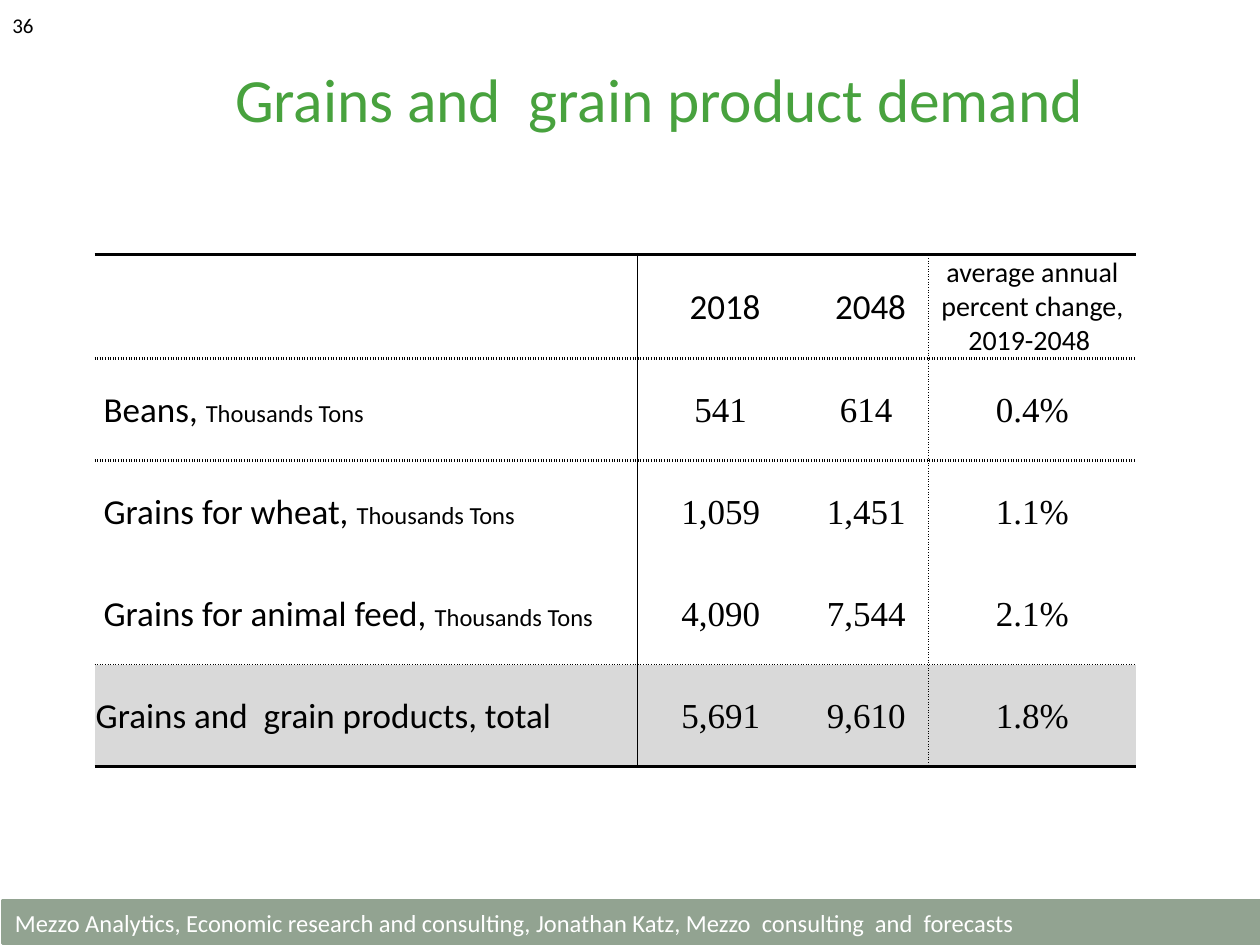
from typing import NamedTuple, Optional

from lxml import etree
from pptx import Presentation
from pptx.dml.color import RGBColor
from pptx.enum.shapes import MSO_SHAPE
from pptx.enum.text import MSO_ANCHOR, MSO_AUTO_SIZE, PP_ALIGN
from pptx.oxml.ns import qn
from pptx.util import Inches, Pt

RECT = MSO_SHAPE.RECTANGLE
MIDDLE = MSO_ANCHOR.MIDDLE
FIXED = MSO_AUTO_SIZE.NONE
LEFT, CENTER = PP_ALIGN.LEFT, PP_ALIGN.CENTER

BLACK = RGBColor(0, 0, 0)
WHITE = RGBColor(0xFF, 0xFF, 0xFF)
GREEN = RGBColor(0x48, 0xA2, 0x3E)
SAGE = RGBColor(0x92, 0xA3, 0x91)
GRAY = RGBColor(0xD9, 0xD9, 0xD9)

SANS, SERIF = "Calibri", "Times New Roman"


class Rule(NamedTuple):
    width: float
    dash: str


class Row(NamedTuple):
    label: str
    unit: str
    start: str
    end: str
    growth: str


THICK, THIN = Rule(2.25, "solid"), Rule(1, "solid")
DOTS, FINE = Rule(2.25, "sysDot"), Rule(1, "sysDot")
ACROSS = [THICK, DOTS, DOTS, None, FINE, THICK]
DOWN = [None, THIN, None, FINE, None]

HEADS = ["", "2018", "2048", "average annual percent change,\n2019-2048 "]
UNIT = "Thousands Tons"
ROWS = [
    Row(" Beans, ", UNIT, "541 ", "614 ", "0.4%"),
    Row(" Grains for wheat, ", UNIT, "1,059 ", "1,451 ", "1.1%"),
    Row(" Grains for animal feed, ", UNIT, "4,090 ", "7,544 ", "2.1%"),
    Row("Grains and  grain products, total", "", "5,691 ", "9,610 ", "1.8%"),
]
WIDTHS = [4.31, 1.39, 0.92, 1.65]
HEIGHT = 0.81


def style(run, size: float, color: RGBColor, font: str = SANS) -> None:
    run.font.size = Pt(size)
    run.font.name = font
    run.font.color.rgb = color


def write(shape, text: str, size: float, color: RGBColor, align) -> None:
    frame = shape.text_frame
    frame.text = text
    frame.word_wrap = True
    frame.auto_size = FIXED
    frame.vertical_anchor = MIDDLE
    para = frame.paragraphs[0]
    para.alignment = align
    style(para.runs[0], size, color)


def edge(cell, side: str, rule: Optional[Rule]) -> None:
    line = etree.SubElement(cell._tc.get_or_add_tcPr(), qn(f"a:ln{side}"))
    if rule is None:
        etree.SubElement(line, qn("a:noFill"))
        return
    line.set("w", str(Pt(rule.width)))
    fill = etree.SubElement(line, qn("a:solidFill"))
    etree.SubElement(fill, qn("a:srgbClr")).set("val", str(BLACK))
    etree.SubElement(line, qn("a:prstDash")).set("val", rule.dash)


def frame_cell(cell, row: int, col: int) -> None:
    cell.vertical_anchor = MIDDLE
    cell.margin_left = cell.margin_right = cell.margin_top = Inches(0.01)
    cell.margin_bottom = 0
    edge(cell, "L", DOWN[col])
    edge(cell, "R", DOWN[col + 1])
    edge(cell, "T", ACROSS[row])
    edge(cell, "B", ACROSS[row + 1])
    if row == len(ROWS):
        cell.fill.solid()
        cell.fill.fore_color.rgb = GRAY
    else:
        cell.fill.background()


def fill_cell(cell, text: str, size: float, font: str, align) -> None:
    cell.text_frame.text = text
    for para in cell.text_frame.paragraphs:
        para.alignment = align
        for run in para.runs:
            style(run, size, BLACK, font)


def add_grid(slide) -> None:
    count = len(ROWS) + 1
    grid = slide.shapes.add_table(
        count, len(WIDTHS), Inches(0.75), Inches(2.02),
        Inches(sum(WIDTHS)), Inches(HEIGHT * count)).table
    grid.first_row = grid.horz_banding = False
    for col, width in enumerate(WIDTHS):
        grid.columns[col].width = Inches(width)
    for row in range(count):
        grid.rows[row].height = Inches(HEIGHT)
        for col in range(len(WIDTHS)):
            frame_cell(grid.cell(row, col), row, col)
    for col, head in enumerate(HEADS):
        fill_cell(grid.cell(0, col), head, 16 if col == 3 else 20, SANS, CENTER)
    for row, item in enumerate(ROWS, 1):
        name = grid.cell(row, 0)
        fill_cell(name, item.label, 20, SANS, LEFT)
        if item.unit:
            run = name.text_frame.paragraphs[0].add_run()
            run.text = item.unit
            style(run, 14, BLACK)
        for col, value in enumerate((item.start, item.end, item.growth), 1):
            fill_cell(grid.cell(row, col), value, 20, SERIF, CENTER)


def main() -> None:
    deck = Presentation()
    deck.slide_width, deck.slide_height = Inches(10), Inches(7.5)
    slide = deck.slides.add_slide(deck.slide_layouts[5])

    bar = slide.shapes.add_shape(
        RECT, Inches(0.02), Inches(7.15), Inches(10.01), Inches(0.34))
    bar.shadow.inherit = False
    bar.fill.solid()
    bar.fill.fore_color.rgb = SAGE
    bar.line.color.rgb = SAGE
    bar.line.width = Pt(2)
    write(bar, "Mezzo Analytics, Economic research and consulting, Jonathan Katz, "
          "Mezzo  consulting  and  forecasts", 14, WHITE, LEFT)

    page = slide.shapes.add_textbox(0, 0, Inches(2.33), Inches(0.4))
    write(page, "36", 12, BLACK, LEFT)

    add_grid(slide)

    title = slide.shapes.title
    title.left, title.top = Inches(1.61), Inches(0.24)
    title.width, title.height = Inches(7.24), Inches(1.08)
    write(title, "Grains and  grain product demand", 35.1, GREEN, CENTER)

    deck.save("out.pptx")


if __name__ == "__main__":
    main()
